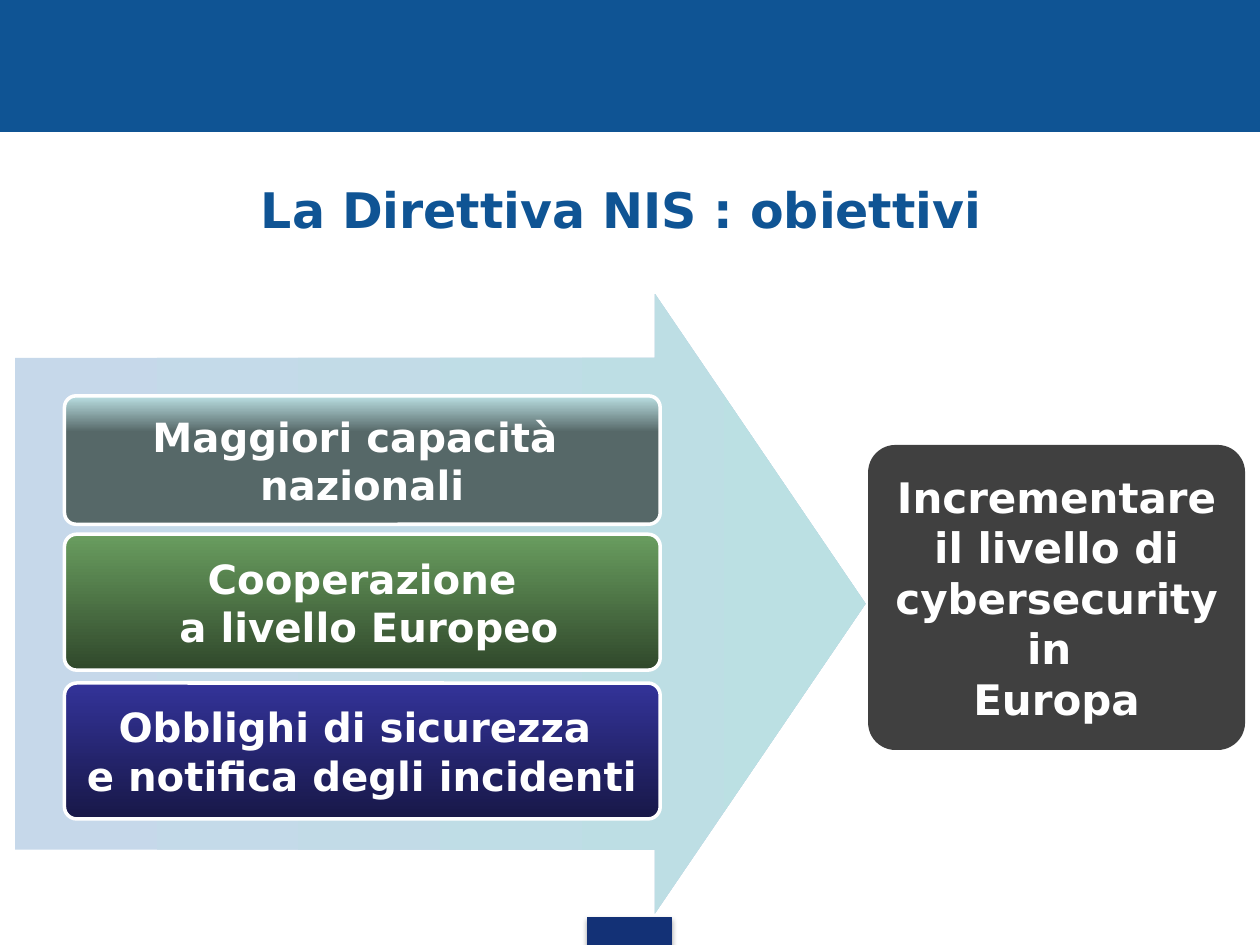
from pptx import Presentation
from pptx.dml.color import RGBColor as RGB
from pptx.enum.shapes import MSO_SHAPE as Geo
from pptx.enum.text import MSO_ANCHOR as Anchor, PP_ALIGN as Align
from pptx.oxml import parse_xml
from pptx.oxml.ns import nsdecls
from pptx.util import Cm, Pt

HUE = {
    "blue": "0F5494", "navy": "133176", "white": "FFFFFF", "dark": "404040",
    "pale": "C6D8EA", "aqua": "BBE0E3", "slate": "566868",
    "leaf": "699D5F", "moss": "30482B", "indigo": "333399", "night": "181848",
}
FONT = "DejaVu Sans"

TITLE = "La Direttiva NIS : obiettivi"
# text, top, height, gradient colours, end of the gradient
GOALS = [
    ("Maggiori capacità \vnazionali", 7.98, 2.59, ("aqua", "slate"), 0.28),
    ("Cooperazione\v a livello Europeo", 10.77, 2.74, ("leaf", "moss"), 1),
    ("Obblighi di sicurezza \ve notifica degli incidenti", 13.77, 2.74,
     ("indigo", "night"), 1),
]
RESULT = "Incrementare il livello di cybersecurity in \nEuropa"


def color(name):
    return RGB.from_string(HUE[name])


def write(shape, text, size=23, hue="white", wrap=True):
    frame = shape.text_frame
    frame.word_wrap = wrap
    frame.vertical_anchor = Anchor.MIDDLE
    frame.text = text
    for para in frame.paragraphs:
        para.alignment = Align.CENTER
        para.line_spacing = Pt(round(size * 1.2, 1))
        for run in para.runs:
            font = run.font
            font.name, font.size, font.bold = FONT, Pt(size), True
            font.color.rgb = color(hue)


def draw(slide, geo, place, fill, line=None, width=0.75, adj=()):
    shape = slide.shapes.add_shape(geo, *map(Cm, place))
    shape.shadow.inherit = False
    for i, value in enumerate(adj):
        shape.adjustments[i] = value
    if fill:
        shape.fill.solid()
        shape.fill.fore_color.rgb = color(fill)
    if line:
        shape.line.color.rgb = color(line)
        shape.line.width = Pt(width)
    else:
        shape.line.fill.background()
    return shape


def blend(shape, hues, angle, end=1):
    """Fill with two colours; the second is reached at the share end."""
    shape.fill.gradient()
    shape.fill.gradient_angle = angle
    for stop, hue, pos in zip(shape.fill.gradient_stops, hues, (0, end)):
        stop.color.rgb = color(hue)
        stop.position = pos


def shade(shape):
    """Add a soft shadow straight below."""
    effects = shape.element.spPr.find(
        "{http://schemas.openxmlformats.org/drawingml/2006/main}effectLst")
    effects.append(parse_xml(
        f'<a:outerShdw {nsdecls("a")} blurRad="{Pt(3.1)}" dist="{Pt(1.8)}" '
        'dir="5400000" rotWithShape="0"><a:srgbClr val="000000">'
        '<a:alpha val="35000"/></a:srgbClr></a:outerShdw>'))


def main():
    deck = Presentation()
    deck.slide_width, deck.slide_height = Cm(25.4), Cm(19.05)
    slide = deck.slides.add_slide(deck.slide_layouts[6])

    draw(slide, Geo.RECTANGLE, (0, 0, 25.4, 2.65), "blue", "blue")
    shade(draw(slide, Geo.RECTANGLE, (11.84, 18.5, 1.7, 0.55), "navy", "navy"))

    title = slide.shapes.add_textbox(*map(Cm, (1.09, 2.92, 22.86, 2.6)))
    write(title, TITLE, size=28, hue="blue")

    arrow = draw(slide, Geo.RIGHT_ARROW, (0.3, 5.92, 17.15, 12.5), None,
                 adj=(0.793, 0.34))
    blend(arrow, ("pale", "aqua"), 0)

    for text, top, height, hues, end in GOALS:
        goal = draw(slide, Geo.ROUNDED_RECTANGLE, (1.3, top, 12.01, height),
                    None, "white", 2, adj=(0.09,))
        blend(goal, hues, 270, end)
        write(goal, text, wrap=False)

    result = draw(slide, Geo.ROUNDED_RECTANGLE, (17.5, 8.97, 7.6, 6.15),
                  "dark", adj=(0.09,))
    write(result, RESULT, size=24)

    deck.save("out.pptx")


if __name__ == "__main__":
    main()
